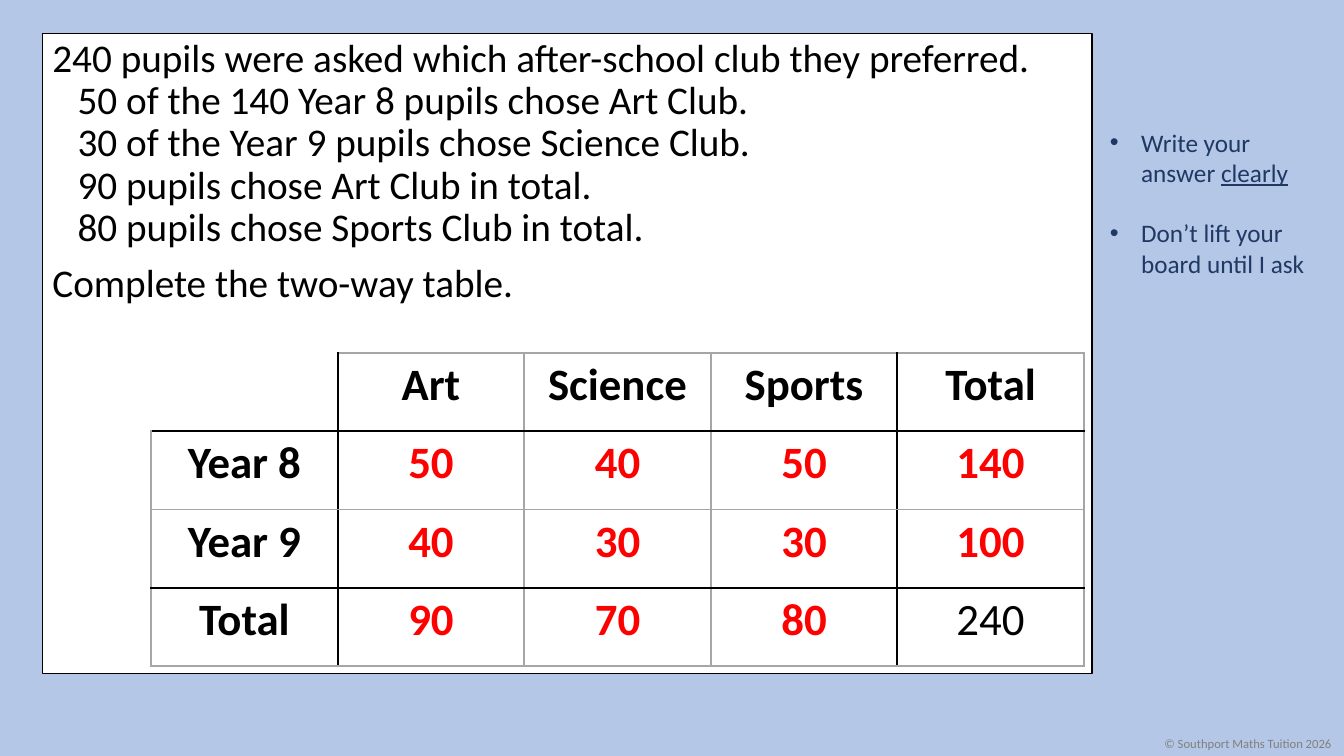
"""Build the two-way table slide about after-school clubs, with its three reveal stages."""
from dataclasses import dataclass

import lxml.etree
import pptx
import pptx.dml.color
import pptx.enum.shapes
import pptx.enum.text
import pptx.oxml.ns
import pptx.util

Inches = pptx.util.Inches
Pt = pptx.util.Pt
qn = pptx.oxml.ns.qn
BLACK, WHITE, GREY, RED, NAVY = "000000", "FFFFFF", "A6A6A6", "FF0000", "203864"
PANEL = (0.42, 0.33, 10.41, 6.35)

QUESTION = [
    "240 pupils were asked which after-school club they preferred.\v"
    "50 of the 140 Year 8 pupils chose Art Club.\v"
    "30 of the Year 9 pupils chose Science Club.\v"
    "90 pupils chose Art Club in total.\v"
    "80 pupils chose Sports Club in total.",
    "Complete the two-way table.",
]
CLUB_TABLE = [
    ["", "Art", "Science", "Sports", "Total"],
    ["Year 8", "50", "40", "50", "140"],
    ["Year 9", "40", "30", "30", "100"],
    ["Total", "90", "70", "80", "240"],
]
ANSWERS = {(i, j) for i in range(1, 4) for j in range(1, 5)} - {(3, 4)}
STATED = {(1, 1), (1, 4), (2, 2), (3, 1), (3, 3)}
STAGES = [set(), STATED, ANSWERS]


@dataclass(frozen=True)
class Note:
    text: str
    underlined: str = ""


@dataclass(frozen=True)
class Edge:
    tag: str
    axis: int
    dark: tuple[int, ...]
    outer: bool = False


NOTES = [Note("Write your answer ", "clearly"), Note("Don’t lift your board until I ask")]
EDGES = [
    Edge("a:lnL", 1, (1, 4), outer=True),
    Edge("a:lnR", 1, (0, 3)),
    Edge("a:lnT", 0, (1, 3), outer=True),
    Edge("a:lnB", 0, (0, 2)),
]


def rgb(value: str) -> pptx.dml.color.RGBColor:
    return pptx.dml.color.RGBColor.from_string(value)


def paint(fill, color: str) -> None:
    fill.solid()
    fill.fore_color.rgb = rgb(color)


def style(p, size: float, color: str, bold: bool = False) -> None:
    for r in p.runs:
        r.font.name = "Calibri"
        r.font.size = Pt(size)
        r.font.bold = bold
        r.font.color.rgb = rgb(color)


def hang(p, indent: float, bullet: str = "") -> None:
    pPr = p._p.get_or_add_pPr()
    pPr.set("marL", str(Inches(indent)))
    pPr.set("indent", str(-Inches(indent)))
    if bullet:
        lxml.etree.SubElement(pPr, qn("a:buFont"), typeface="Arial")
        lxml.etree.SubElement(pPr, qn("a:buChar"), char=bullet)
    else:
        lxml.etree.SubElement(pPr, qn("a:buNone"))


def place(sp, left: float, top: float, width: float, height: float) -> None:
    sp.left, sp.top = Inches(left), Inches(top)
    sp.width, sp.height = Inches(width), Inches(height)


def add_panel(slide) -> None:
    sp = slide.shapes.add_shape(pptx.enum.shapes.MSO_SHAPE.RECTANGLE, 0, 0, 0, 0)
    place(sp, *PANEL)
    sp.shadow.inherit = False
    paint(sp.fill, WHITE)
    paint(sp.line.fill, BLACK)
    sp.line.width = Pt(1)
    slide.shapes._spTree.insert(2, sp.element)


def add_question(sp) -> None:
    place(sp, *PANEL)
    tf = sp.text_frame
    tf.auto_size = pptx.enum.text.MSO_AUTO_SIZE.NONE
    tf.vertical_anchor = pptx.enum.text.MSO_ANCHOR.TOP
    for i, text in enumerate(QUESTION):
        p = tf.paragraphs[0] if i == 0 else tf.add_paragraph()
        p.text = text
        hang(p, 0.25)
        p.line_spacing = 0.9
        p.space_before = Pt(10 if i else 0)
        style(p, 28, BLACK)


def add_notes(slide) -> None:
    sp = slide.shapes.add_textbox(0, 0, 0, 0)
    place(sp, 10.91, 1.21, 2.32, 1.62)
    tf = sp.text_frame
    tf.word_wrap = True
    for i, note in enumerate(NOTES):
        p = tf.paragraphs[0] if i == 0 else tf.add_paragraph()
        p.text = note.text
        hang(p, 0.31, "•")
        if i:
            p.space_before = Pt(21.6)
        if note.underlined:
            r = p.add_run()
            r.text = note.underlined
            r.font.underline = True
        style(p, 18, NAVY)


def add_copyright(slide) -> None:
    sp = slide.shapes.add_textbox(0, 0, 0, 0)
    place(sp, 11.45, 7.25, 1.88, 0.25)
    sp.text_frame.word_wrap = False
    p = sp.text_frame.paragraphs[0]
    p.text = "© Southport Maths Tuition 2026"
    style(p, 9, "808080")


def add_borders(cell, row: int, col: int) -> None:
    tcPr = cell._tc.get_or_add_tcPr()
    for edge in EDGES:
        ln = lxml.etree.SubElement(tcPr, qn(edge.tag), w=str(Pt(1.5)))
        if edge.outer and row == col == 0:
            lxml.etree.SubElement(ln, qn("a:noFill"))
            continue
        color = BLACK if (row, col)[edge.axis] in edge.dark else GREY
        fill = lxml.etree.SubElement(ln, qn("a:solidFill"))
        lxml.etree.SubElement(fill, qn("a:srgbClr"), val=color)


def add_club_table(slide, revealed: set[tuple[int, int]]) -> None:
    rows, cols = len(CLUB_TABLE), len(CLUB_TABLE[0])
    table = slide.shapes.add_table(
        rows, cols, Inches(1.5), Inches(3.5), Inches(9.25), Inches(3.11)
    ).table
    table.first_row = table.horz_banding = False
    for i, values in enumerate(CLUB_TABLE):
        for j, value in enumerate(values):
            cell = table.cell(i, j)
            add_borders(cell, i, j)
            paint(cell.fill, WHITE)
            answer = (i, j) in ANSWERS
            if answer and (i, j) not in revealed:
                continue
            p = cell.text_frame.paragraphs[0]
            p.text = value
            p.alignment = pptx.enum.text.PP_ALIGN.CENTER
            style(p, 32, RED if answer else BLACK, bold=value != "240")


def main() -> None:
    prs = pptx.Presentation()
    prs.slide_width, prs.slide_height = Inches(13.33), Inches(7.5)
    slide = prs.slides.add_slide(prs.slide_layouts.get_by_name("Title and Content"))
    paint(slide.background.fill, "B4C7E7")
    title = slide.shapes.title
    title.element.getparent().remove(title.element)
    add_panel(slide)
    add_question(slide.placeholders[1])
    add_notes(slide)
    add_copyright(slide)
    for revealed in STAGES:
        add_club_table(slide, revealed)
    prs.save("out.pptx")


if __name__ == "__main__":
    main()
